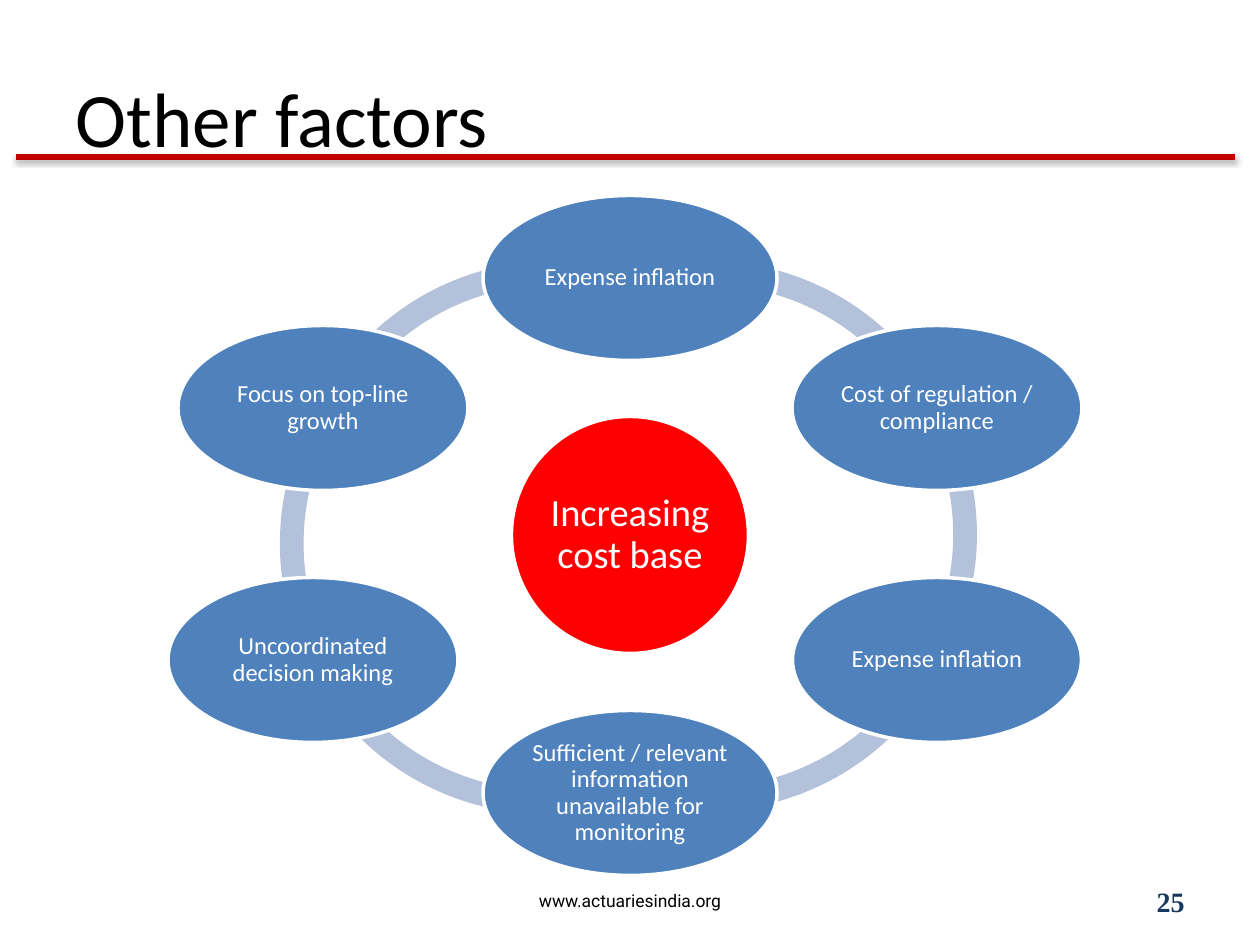
"""Build the "Other factors" slide: six cost drivers on a ring around the cost base."""
import pptx
import pptx.dml.color
import pptx.enum.shapes
import pptx.enum.text
import pptx.oxml
import pptx.util

SCALE = 914400 / 126
ALIGN = pptx.enum.text.PP_ALIGN
SHAPES = pptx.enum.shapes.MSO_SHAPE
DRAWING = "http://schemas.openxmlformats.org/drawingml/2006/main"


def px(*lengths):
    return [pptx.util.Emu(round(length * SCALE)) for length in lengths]


def color(value):
    return pptx.dml.color.RGBColor.from_string(value)


presentation = pptx.Presentation()
presentation.slide_width, presentation.slide_height = px(1260, 945)
slide = presentation.slides.add_slide(presentation.slide_layouts[5])

rule = slide.shapes.add_connector(
    pptx.enum.shapes.MSO_CONNECTOR.STRAIGHT, *px(16, 157, 1235, 157))
rule.line.color.rgb = color("C00000")
rule.line.width = pptx.util.Pt(3)
rule.element.spPr.append(pptx.oxml.parse_xml(
    f'<a:effectLst xmlns:a="{DRAWING}">'
    '<a:outerShdw blurRad="39370" dist="20320" dir="5400000" rotWithShape="0">'
    '<a:srgbClr val="000000"><a:alpha val="38000"/></a:srgbClr>'
    '</a:outerShdw></a:effectLst>'))

title = slide.shapes.title
title.left, title.top, title.width, title.height = px(63, 38, 1134, 157)
title.text_frame.text = "Other factors"
title.text_frame.vertical_anchor = pptx.enum.text.MSO_ANCHOR.MIDDLE
heading = title.text_frame.paragraphs[0]
heading.alignment = ALIGN.LEFT
heading.runs[0].font.size = pptx.util.Pt(44)
heading.runs[0].font.name = "Calibri"
heading.runs[0].font.color.rgb = color("000000")

ring_arcs = [
    (290, 261, 206.7, 287.4),
    (280, 280, 152.98, 211.67),
    (282, 287, 70.8, 154.61),
    (444, 284, 26.09, 107.18),
    (450, 271, 330.56, 29.2),
    (444, 261, 252.65, 333.29),
]
for left, top, start_angle, end_angle in ring_arcs:
    arc = slide.shapes.add_shape(SHAPES.BLOCK_ARC, *px(left, top, 527, 527))
    arc.adjustments[0] = start_angle * 0.6
    arc.adjustments[1] = end_angle * 0.6
    arc.adjustments[2] = 0.045
    arc.shadow.inherit = False
    arc.fill.solid()
    arc.fill.fore_color.rgb = color("B3C1DB")
    arc.line.fill.background()

factors = [
    ("Increasing cost base", 630, 535, 237, 237, "FF0000", 22, 4),
    ("Expense inflation", 630, 278, 294, 165, "4F81BD", 14, 2),
    ("Cost of regulation / compliance", 937, 408, 290, 165, "4F81BD", 14, 2),
    ("Expense inflation", 937, 660, 289, 165, "4F81BD", 14, 2),
    ("Sufficient / relevant information unavailable for monitoring",
     630, 793, 294, 165, "4F81BD", 14, 2),
    ("Uncoordinated decision making", 313, 660, 290, 165, "4F81BD", 14, 2),
    ("Focus on top-line growth", 323, 408, 290, 165, "4F81BD", 14, 2),
]
for text, center_x, center_y, width, height, fill, size, inset in factors:
    ellipse = slide.shapes.add_shape(
        SHAPES.OVAL, *px(center_x - width / 2, center_y - height / 2, width, height))
    ellipse.shadow.inherit = False
    ellipse.fill.solid()
    ellipse.fill.fore_color.rgb = color(fill)
    ellipse.line.color.rgb = color("FFFFFF")
    ellipse.line.width = pptx.util.Pt(2)
    frame = ellipse.text_frame
    frame.text = text
    frame.word_wrap = True
    frame.vertical_anchor = pptx.enum.text.MSO_ANCHOR.MIDDLE
    frame.margin_left, frame.margin_top, frame.margin_right, frame.margin_bottom = px(*[inset] * 4)
    paragraph = frame.paragraphs[0]
    paragraph.alignment = ALIGN.CENTER
    paragraph.line_spacing = 0.9
    font = paragraph.runs[0].font
    font.size = pptx.util.Pt(size)
    font.name = "Calibri"
    font.color.rgb = color("FFFFFF")

footers = [
    ("www.actuariesindia.org", 0, 1260, ALIGN.CENTER, "Roboto", 10, "000000", False),
    ("25", 903, 294, ALIGN.RIGHT, "Times New Roman", 16, "17375E", True),
]
for text, left, width, alignment, typeface, size, ink, bold in footers:
    footer = slide.shapes.add_textbox(*px(left, 876, width, 50))
    frame = footer.text_frame
    frame.text = text
    frame.word_wrap = True
    frame.vertical_anchor = pptx.enum.text.MSO_ANCHOR.MIDDLE
    paragraph = frame.paragraphs[0]
    paragraph.alignment = alignment
    font = paragraph.runs[0].font
    font.name = typeface
    font.size = pptx.util.Pt(size)
    font.bold = bold
    font.color.rgb = color(ink)

presentation.save("out.pptx")
